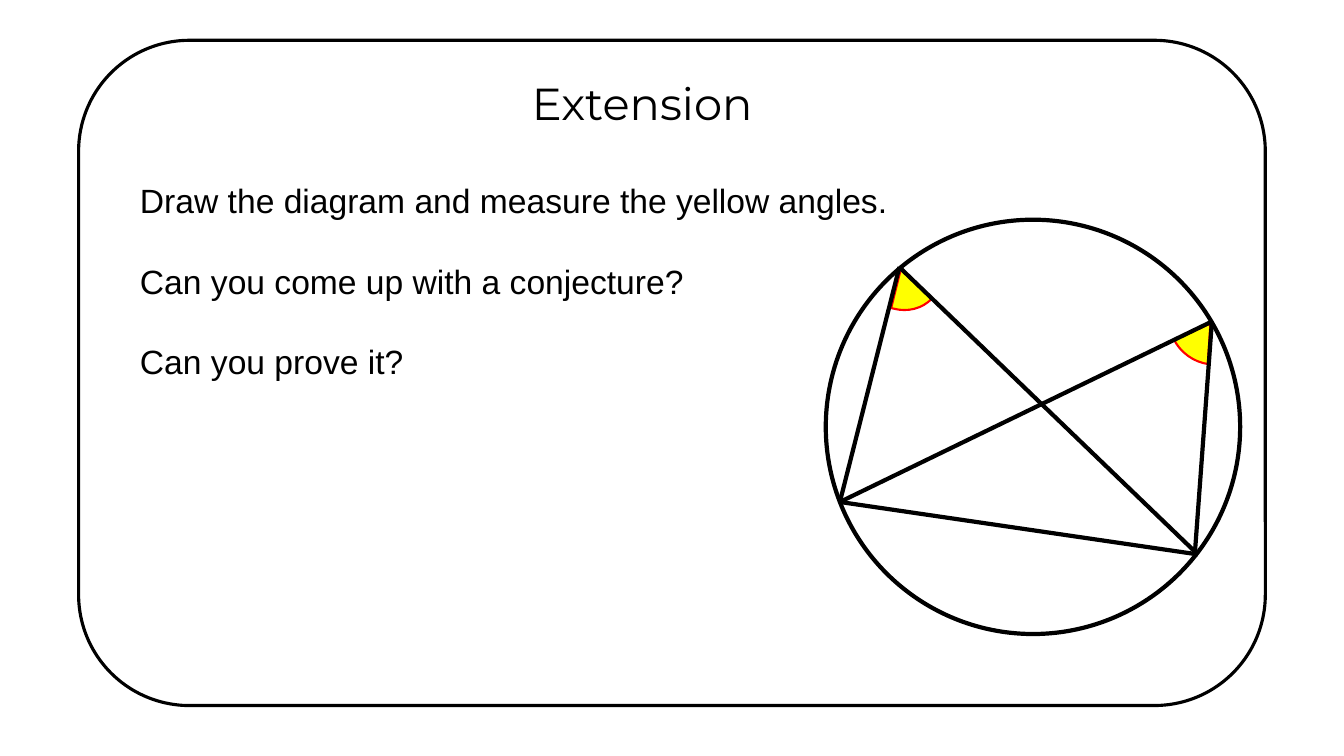
from dataclasses import dataclass

from lxml import etree
from pptx import Presentation
from pptx.dml.color import RGBColor
from pptx.enum.shapes import MSO_CONNECTOR, MSO_SHAPE
from pptx.enum.text import MSO_AUTO_SIZE, PP_ALIGN
from pptx.oxml.ns import qn
from pptx.shapes.autoshape import Shape
from pptx.slide import Slide
from pptx.util import Inches, Pt

STRAIGHT = MSO_CONNECTOR.STRAIGHT
ROUNDED, OVAL, PIE = MSO_SHAPE.ROUNDED_RECTANGLE, MSO_SHAPE.OVAL, MSO_SHAPE.PIE
LEFT, CENTER = PP_ALIGN.LEFT, PP_ALIGN.CENTER
GROW = MSO_AUTO_SIZE.SHAPE_TO_FIT_TEXT

BLACK = RGBColor(0x00, 0x00, 0x00)
WHITE = RGBColor(0xFF, 0xFF, 0xFF)
YELLOW = RGBColor(0xFF, 0xFF, 0x00)
RED = RGBColor(0xFF, 0x00, 0x00)

Point = tuple[float, float]
Frame = tuple[float, float, float, float]


@dataclass(frozen=True)
class Outline:
    kind: MSO_SHAPE
    frame: Frame
    fill: RGBColor | None
    line: RGBColor
    weight: float


@dataclass(frozen=True)
class Angle:
    left: float
    top: float
    start: float
    end: float


@dataclass(frozen=True)
class Label:
    frame: Frame
    lines: tuple[str, ...]
    align: PP_ALIGN
    font: dict[str, object]
    gap: float = 0


CARD = Outline(ROUNDED, (0.78, 0.4, 11.77, 6.6), WHITE, BLACK, 2.25)
CIRCLE = Outline(OVAL, (8.19, 2.18, 4.11, 4.11), None, BLACK, 3)

# Sector limits in degrees, before the flip and turn
ANGLES = (
    Angle(11.58, 2.82, 247.42, 309.31),
    Angle(8.51, 2.28, 298.96, 359.29),
)
ANGLE_SIZE = (0.85, 0.78)
ANGLE_TURN = 42.9
ADJUSTMENT_PER_DEGREE = 0.6

# Corners on the circle and the chords between them
LOWER_LEFT, LOWER_RIGHT = (8.33, 4.98), (11.88, 5.5)
UPPER_LEFT, UPPER_RIGHT = (8.92, 2.65), (12.02, 3.19)
CHORDS = (
    (LOWER_LEFT, LOWER_RIGHT),
    (UPPER_RIGHT, (11.85, 5.5)),
    (UPPER_RIGHT, LOWER_LEFT),
    (UPPER_LEFT, LOWER_LEFT),
    (UPPER_LEFT, LOWER_RIGHT),
)

LABELS = (
    Label(
        (1.29, 1.74, 10.04, 2.12),
        (
            "Draw the diagram and measure the yellow angles.",
            "Can you come up with a conjecture?",
            "Can you prove it?",
        ),
        LEFT,
        {"name": "Arial", "size": Pt(24)},
        28.5,
    ),
    Label((4.46, 0.7, 3.82, 0.64), ("Extension",), CENTER,
          {"name": "Montserrat", "size": Pt(32)}),
)


def draw_outline(page: Slide, outline: Outline) -> Shape:
    shape = page.shapes.add_shape(outline.kind, *map(Inches, outline.frame))
    shape.shadow.inherit = False
    if outline.fill is None:
        shape.fill.background()
    else:
        shape.fill.solid()
        shape.fill.fore_color.rgb = outline.fill
    shape.line.color.rgb = outline.line
    shape.line.width = Pt(outline.weight)
    return shape


def draw_angle(page: Slide, angle: Angle) -> None:
    frame = (angle.left, angle.top, *ANGLE_SIZE)
    sector = draw_outline(page, Outline(PIE, frame, YELLOW, RED, 1.5))
    sector.rotation = ANGLE_TURN
    sector.adjustments[0] = angle.start * ADJUSTMENT_PER_DEGREE
    sector.adjustments[1] = angle.end * ADJUSTMENT_PER_DEGREE
    sector.element.spPr.find(qn("a:xfrm")).set("flipV", "1")


def draw_chord(page: Slide, start: Point, end: Point) -> None:
    chord = page.shapes.add_connector(STRAIGHT, *map(Inches, start + end))
    chord.line.color.rgb = BLACK
    chord.line.width = Pt(3)
    etree.SubElement(chord.element.spPr, qn("a:effectLst"))


def write_label(page: Slide, label: Label) -> None:
    box = page.shapes.add_textbox(*map(Inches, label.frame))
    frame = box.text_frame
    frame.word_wrap = True
    frame.auto_size = GROW
    for index, line in enumerate(label.lines):
        para = frame.add_paragraph() if index else frame.paragraphs[0]
        para.alignment = label.align
        if index:
            para.space_before = Pt(label.gap)
        span = para.add_run()
        span.text = line
        for name, value in label.font.items():
            setattr(span.font, name, value)
        span.font.color.rgb = BLACK


def main() -> None:
    deck = Presentation()
    deck.slide_width, deck.slide_height = Inches(13.33), Inches(7.5)
    page = deck.slides.add_slide(deck.slide_layouts[6])

    # Card
    draw_outline(page, CARD)

    # Circle diagram, with the angles beneath the chords
    for angle in ANGLES:
        draw_angle(page, angle)
    draw_outline(page, CIRCLE)
    for start, end in CHORDS:
        draw_chord(page, start, end)

    # Title and questions
    for label in LABELS:
        write_label(page, label)

    deck.save("out.pptx")


if __name__ == "__main__":
    main()
